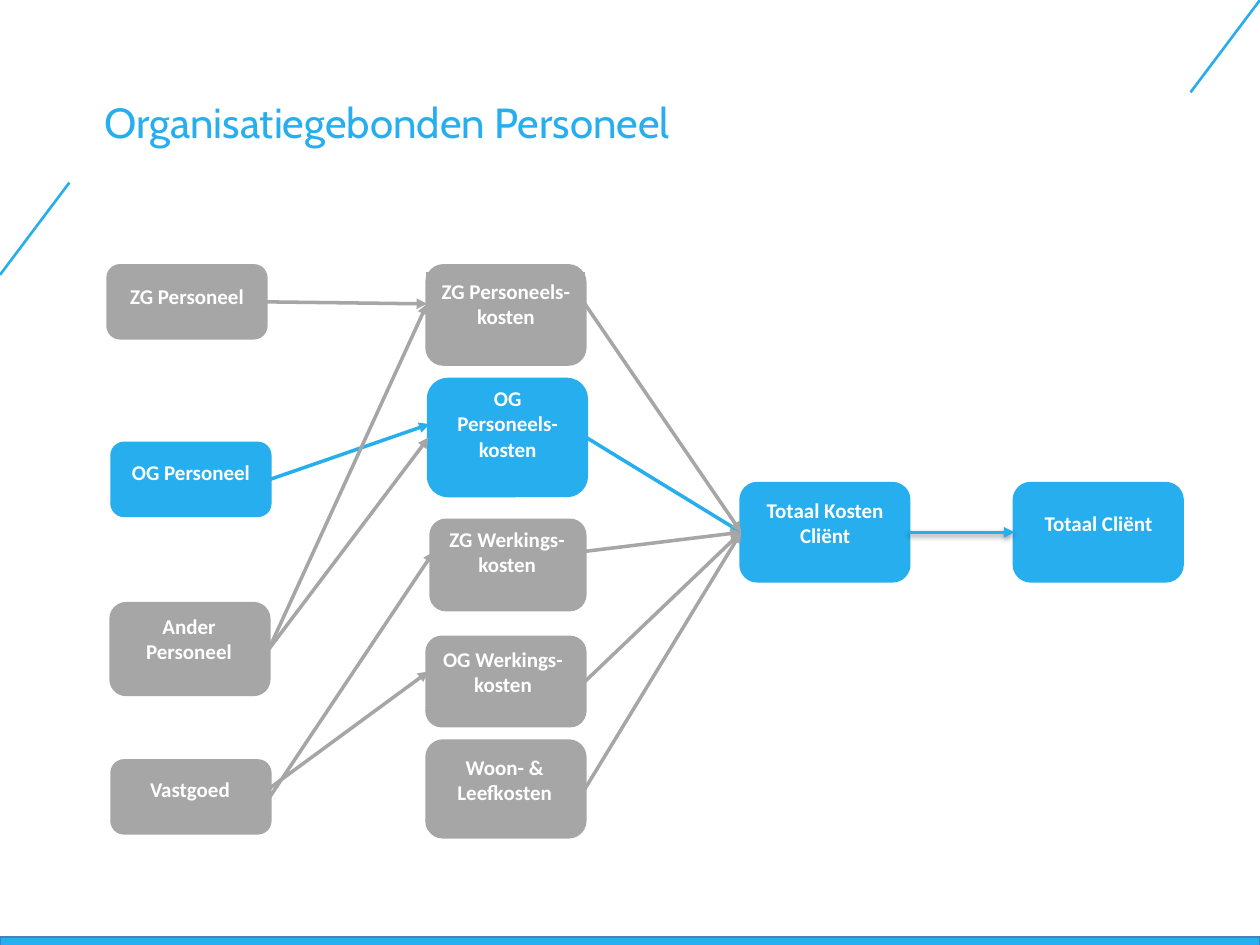
"""Build a slide that shows how staff and property costs flow into the total per client."""
from lxml import etree
from pptx import Presentation, util as u
from pptx.dml.color import RGBColor
from pptx.enum import shapes as sh, text as tx
from pptx.oxml import parse_xml
from pptx.oxml.ns import nsdecls, qn

BLUE = RGBColor(0x27, 0xAE, 0xEF)
GREY = RGBColor(0xA6, 0xA6, 0xA6)
EDGE = RGBColor(0x4B, 0x7E, 0xBC)
WHITE = RGBColor(0xFF, 0xFF, 0xFF)

HEAD = {"size": u.Pt(24), "name": "Cabin"}
BOLD = {"size": u.Pt(12), "name": "Calibri", "bold": True}
GLOW = (
    f'<a:effectLst {nsdecls("a")}><a:outerShdw blurRad="40000" dist="20000" dir="5400000" '
    'rotWithShape="0"><a:srgbClr val="000000"><a:alpha val="38000"/></a:srgbClr>'
    "</a:outerShdw></a:effectLst>"
)

# name: (colour, box, label text, label box, label filled)
NODES = {
    "zgp": (GREY, (2.18, 5.36, 3.18, 1.45), "ZG Personeel", (2.18, 5.59, 3.18, 0.76), True),
    "ogp": (BLUE, (2.26, 8.94, 3.18, 1.45), "OG Personeel", (2.29, 9.14, 3.12, 0.76), True),
    "other": (GREY, (2.24, 12.17, 3.18, 1.83), "Ander Personeel", (2.26, 12.24, 3.1, 1.27), False),
    "estate": (GREY, (2.26, 15.34, 3.18, 1.45), "Vastgoed", (2.24, 15.52, 3.18, 0.76), False),
    "zgpk": (GREY, (8.61, 5.36, 3.18, 1.98), "ZG Personeels-kosten", (8.61, 5.49, 3.18, 1.27), True),
    "ogpk": (BLUE, (8.64, 7.65, 3.18, 2.34), "OG Personeels-kosten", (8.66, 7.65, 3.15, 1.8), False),
    "zgwk": (GREY, (8.69, 10.49, 3.1, 1.8), "ZG Werkings-kosten", (8.74, 10.49, 2.97, 1.27), False),
    "ogwk": (GREY, (8.61, 12.85, 3.18, 1.78), "OG Werkings-kosten", (8.64, 12.9, 3, 1.27), False),
    "home": (GREY, (8.61, 14.94, 3.18, 1.93), "Woon- & Leefkosten", (8.69, 15.09, 2.97, 1.27), False),
    "cost": (BLUE, (14.94, 9.75, 3.38, 1.96), "Totaal Kosten Cliënt", (14.96, 9.91, 3.35, 1.27), False),
    "total": (BLUE, (20.45, 9.75, 3.38, 1.96), "Totaal Cliënt", (20.47, 10.16, 3.35, 0.76), False),
}
BOX, LABEL = 0, 1
LINKS = [
    ("zgp", BOX, "zgpk", LABEL, GREY),
    ("ogp", BOX, "ogpk", LABEL, BLUE),
    ("other", BOX, "ogpk", BOX, GREY),
    ("other", BOX, "zgpk", LABEL, GREY),
    ("estate", LABEL, "ogwk", LABEL, GREY),
    ("estate", BOX, "zgwk", LABEL, GREY),
    ("ogpk", BOX, "cost", BOX, BLUE),
    ("zgwk", LABEL, "cost", BOX, GREY),
    ("ogwk", BOX, "cost", BOX, GREY),
    ("home", BOX, "cost", BOX, GREY),
    ("zgpk", LABEL, "cost", BOX, GREY),
    ("cost", BOX, "total", BOX, BLUE),
]


def style(item, form):
    """Set each attribute in form on item."""
    for key, val in form.items():
        setattr(item, key, val)


def span(box):
    """Turn numbers into centimetre lengths."""
    return [u.Cm(n) for n in box]


def paint(shape, fill, edge, width):
    """Give a shape a solid fill and outline."""
    shape.fill.solid()
    shape.fill.fore_color.rgb = fill
    shape.line.color.rgb = edge
    shape.line.width = u.Pt(width)


def block(slide, kind, box, fill, edge, width):
    """Add a filled preset shape without shadow."""
    shape = slide.shapes.add_shape(kind, *span(box))
    shape.shadow.inherit = False
    paint(shape, fill, edge, width)
    return shape


def words(slide, box, line, font, tint, form, align):
    """Add a text box with one paragraph."""
    shape = slide.shapes.add_textbox(*span(box))
    style(shape.text_frame, {"word_wrap": True, **form})
    para = shape.text_frame.paragraphs[0]
    para.text = line
    para.alignment = align
    style(para.font, font)
    para.font.color.rgb = tint
    return shape


def node(slide, tint, box, line, spot, solid):
    """Add a rounded box with its label and return both."""
    base = block(slide, sh.MSO_SHAPE.ROUNDED_RECTANGLE, box, tint, tint, 2)
    form = {"auto_size": tx.MSO_AUTO_SIZE.SHAPE_TO_FIT_TEXT}
    label = words(slide, spot, line, BOLD, WHITE, form, tx.PP_ALIGN.CENTER)
    if solid:
        paint(label, tint, tint, 0.75)
    return base, label


def stroke(slide, ends, tint, width):
    """Add a straight line without shadow."""
    line = slide.shapes.add_connector(sh.MSO_CONNECTOR.STRAIGHT, *span(ends))
    line.line.color.rgb = tint
    line.line.width = u.Pt(width)
    etree.SubElement(line._element.spPr, qn("a:effectLst"))
    return line


def arrow(slide, start, end, tint):
    """Join the right side of start to the left side of end."""
    line = stroke(slide, (0, 0, 0, 0), tint, 2)
    line.begin_connect(start, 3)
    line.end_connect(end, 1)
    etree.SubElement(line.line._get_or_add_ln(), qn("a:tailEnd"), type="triangle")
    return line


def main():
    """Build and save the slide."""
    deck = Presentation()
    deck.slide_width, deck.slide_height = span((25.4, 19.05))
    slide = deck.slides.add_slide(deck.slide_layouts[6])

    block(slide, sh.MSO_SHAPE.RECTANGLE, (0, 18.89, 25.4, 0.17), BLUE, EDGE, 0.75)
    for ends in ((1.4, 3.68, 0, 5.54), (25.4, 0, 24, 1.86)):
        stroke(slide, ends, BLUE, 1.5)
    words(slide, (1.85, 1.83, 21.03, 1.6), "Organisatiegebonden Personeel",
          HEAD, BLUE, {}, tx.PP_ALIGN.LEFT)

    parts = {name: node(slide, *spec) for name, spec in NODES.items()}
    for start, out, end, into, tint in LINKS:
        last = arrow(slide, parts[start][out], parts[end][into], tint)
    props = last._element.spPr
    props.replace(props.find(qn("a:effectLst")), parse_xml(GLOW))

    deck.save("out.pptx")


if __name__ == "__main__":
    main()
